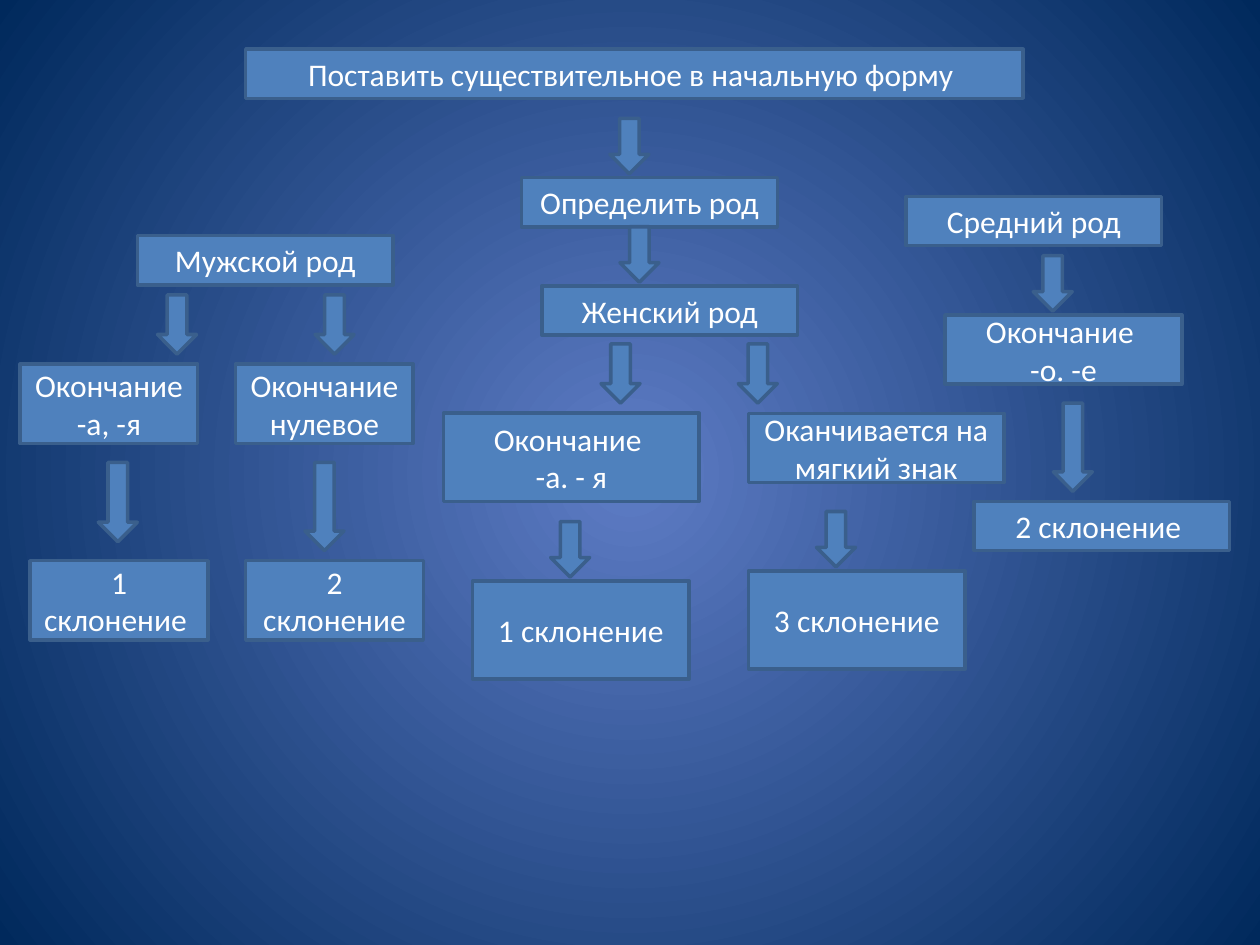
from dataclasses import dataclass

from lxml.etree import SubElement
from pptx import Presentation
from pptx.dml.color import RGBColor
from pptx.enum.shapes import MSO_SHAPE
from pptx.enum.text import MSO_ANCHOR, PP_ALIGN
from pptx.oxml.ns import qn
from pptx.util import Inches, Pt


@dataclass(frozen=True)
class Theme:
    """Colours, font and sizes of the scheme."""
    center: RGBColor = RGBColor(0x5E, 0x7C, 0xC5)
    edge: RGBColor = RGBColor(0x00, 0x29, 0x5C)
    fill: RGBColor = RGBColor(0x4F, 0x81, 0xBD)
    line: RGBColor = RGBColor(0x3A, 0x5F, 0x8C)
    text: RGBColor = RGBColor(0xFF, 0xFF, 0xFF)
    font: str = "Calibri"
    text_size: Pt = Pt(18)
    line_width: Pt = Pt(2)


@dataclass(frozen=True)
class Box:
    """A rectangle in inches that can hold other rectangles."""
    left: float
    top: float
    width: float
    height: float

    def inner(self, left, top, width, height):
        """Return a box placed relative to this one."""
        return Box(self.left + left, self.top + top, width, height)


THEME = Theme()
LABEL_WIDTH, LABEL_HEIGHT = 2.03, 0.39
ARROW_WIDTH = 0.31


def paint_background(slide):
    """Fill the background with a circular gradient."""
    fill = slide.background.fill
    fill.gradient()
    for stop, color in zip(fill.gradient_stops, (THEME.center, THEME.edge)):
        stop.color.rgb = color
    gradient = slide.element.find(".//" + qn("a:gradFill"))
    gradient.remove(gradient.find(qn("a:lin")))
    circle = SubElement(gradient, qn("a:path"), {"path": "circle"})
    sides = {side: "50000" for side in ("l", "t", "r", "b")}
    SubElement(circle, qn("a:fillToRect"), sides)


def add_block(slide, preset, box):
    """Add a filled and outlined preset shape."""
    lengths = (box.left, box.top, box.width, box.height)
    shape = slide.shapes.add_shape(preset, *map(Inches, lengths))
    shape.shadow.inherit = False
    shape.fill.solid()
    shape.fill.fore_color.rgb = THEME.fill
    shape.line.color.rgb = THEME.line
    shape.line.width = THEME.line_width
    return shape


def add_step(slide, box, *lines):
    """Add a rectangle with one paragraph for each line."""
    frame = add_block(slide, MSO_SHAPE.RECTANGLE, box).text_frame
    frame.word_wrap = True
    frame.vertical_anchor = MSO_ANCHOR.MIDDLE
    frame.text = "\n".join(lines)
    for paragraph in frame.paragraphs:
        paragraph.alignment = PP_ALIGN.CENTER
        paragraph.font.name = THEME.font
        paragraph.font.size = THEME.text_size
        paragraph.font.color.rgb = THEME.text


def add_arrow(slide, area, left, top, height):
    """Add a down arrow relative to an area."""
    add_block(slide, MSO_SHAPE.DOWN_ARROW, area.inner(left, top, ARROW_WIDTH, height))


def draw_start(slide, area):
    """Draw the two opening steps and their arrows."""
    add_step(slide, area.inner(0, 0, area.width, LABEL_HEIGHT),
             "Поставить существительное в начальную форму ")
    add_step(slide, area.inner(2.19, 1.02, LABEL_WIDTH, LABEL_HEIGHT), "Определить род")
    add_arrow(slide, area, 2.89, 0.55, 0.44)
    add_arrow(slide, area, 2.97, 1.41, 0.44)


def draw_masculine(slide, area):
    """Draw the masculine branch with its two columns."""
    add_step(slide, area.inner(0.93, 0, LABEL_WIDTH, LABEL_HEIGHT), "Мужской род")
    columns = (
        (0, "-а, -я", "1 склонение ", 1.09, 0.62, 0.63),
        (1.71, "нулевое", "2 склонение", 2.34, 2.26, 0.7),
    )
    for left, ending, declension, upper, lower, lower_height in columns:
        add_step(slide, area.inner(left, 1.02, 1.41, 0.63), "Окончание ", ending)
        add_step(slide, area.inner(left + 0.08, 2.58, 1.41, 0.63), declension)
        add_arrow(slide, area, upper, 0.47, 0.47)
        add_arrow(slide, area, lower, 1.8, lower_height)


def draw_feminine(slide, area):
    """Draw the feminine branch with its two columns."""
    add_step(slide, area.inner(0.78, 0, LABEL_WIDTH, LABEL_HEIGHT), "Женский род")
    columns = (
        (0, 0.7, ("Окончание ", "-а. - я"), "1 склонение", 0.23, 2.34, 1.25, 0.85),
        (2.42, 0.55, ("Оканчивается на мягкий знак",), "3 склонение", 2.42, 2.26, 2.34, 2.96),
    )
    for left, height, lines, declension, result_left, result_top, upper, lower in columns:
        add_step(slide, area.inner(left, 1.01, LABEL_WIDTH, height), *lines)
        add_step(slide, area.inner(result_left, result_top, 1.72, 0.78), declension)
        add_arrow(slide, area, upper, 0.46, 0.47)
        add_arrow(slide, area, lower, result_top - 0.47, 0.44)


def draw_neuter(slide, area):
    """Draw the neuter branch as a single chain."""
    add_step(slide, area.inner(0, 0, LABEL_WIDTH, LABEL_HEIGHT), "Средний род")
    add_step(slide, area.inner(0.31, 0.94, 1.88, 0.55), "Окончание ", "-о. -е")
    add_step(slide, area.inner(0.54, 2.42, LABEL_WIDTH, LABEL_HEIGHT), "2 склонение ")
    add_arrow(slide, area, 1.01, 0.47, 0.44)
    add_arrow(slide, area, 1.17, 1.64, 0.7)


def main():
    """Build the declension scheme and save it."""
    presentation = Presentation()
    presentation.slide_width = Inches(10)
    presentation.slide_height = Inches(7.5)
    slide = presentation.slides.add_slide(presentation.slide_layouts[6])
    paint_background(slide)
    draw_start(slide, Box(1.95, 0.39, 6.17, 1.85))
    draw_masculine(slide, Box(0.16, 1.87, 3.2, 3.21))
    draw_feminine(slide, Box(3.52, 2.27, 4.45, 3.12))
    draw_neuter(slide, Box(7.19, 1.56, 2.57, 2.81))
    presentation.save("out.pptx")


if __name__ == "__main__":
    main()
